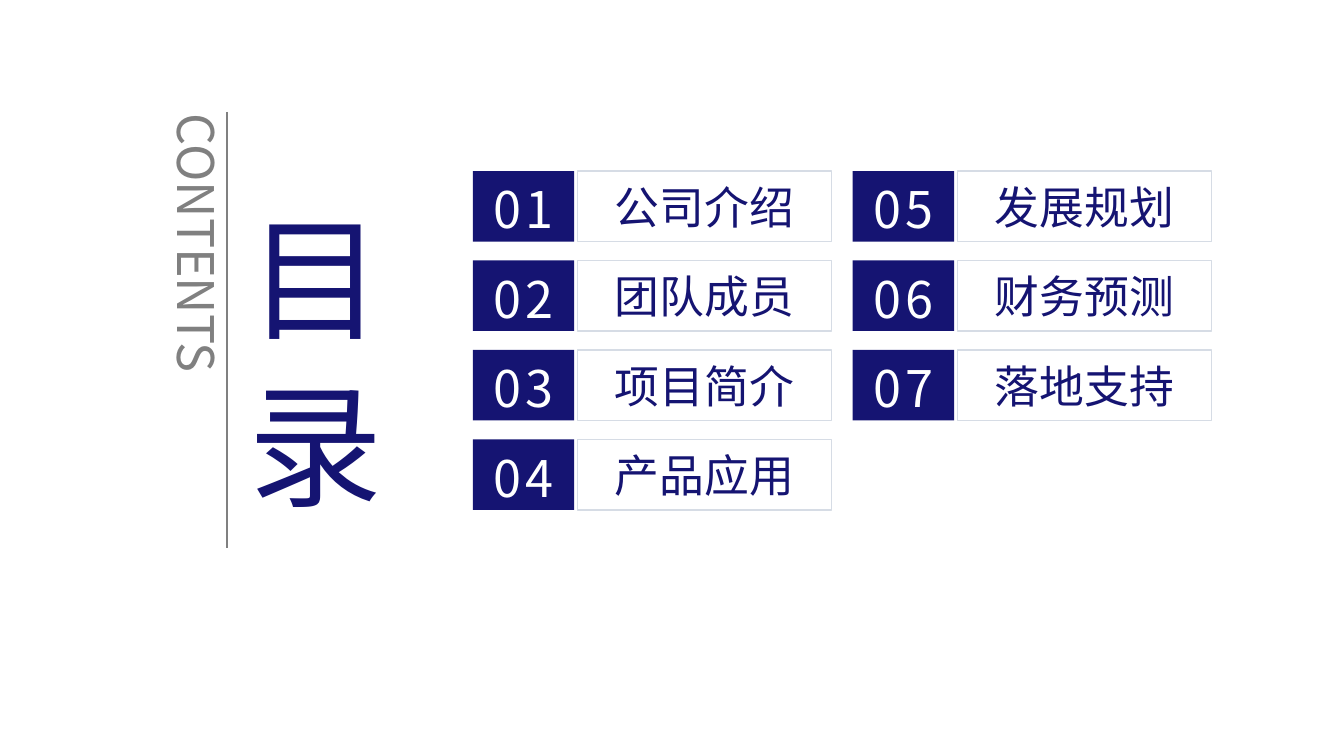
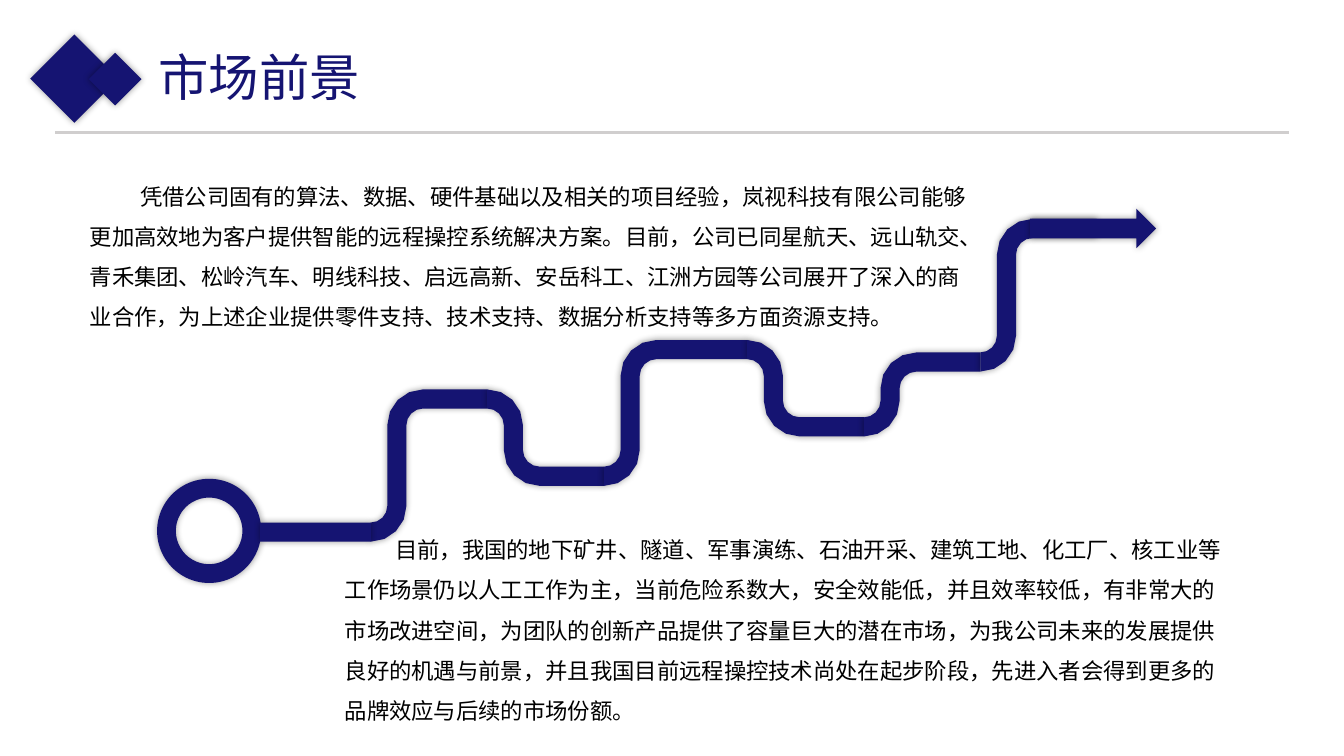
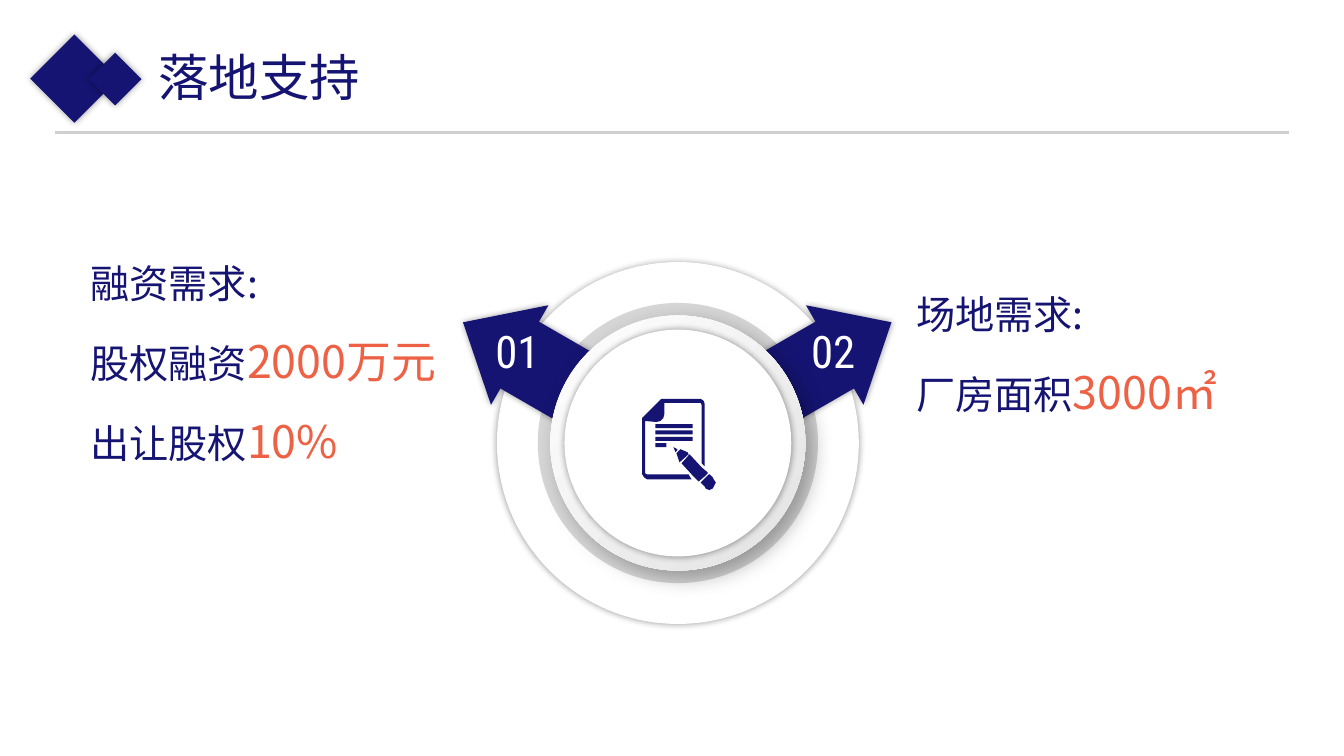
import dataclasses
import itertools
import math

import lxml.etree
import pptx
import pptx.dml.color
import pptx.enum.dml
import pptx.enum.shapes
import pptx.enum.text
import pptx.oxml.ns
import pptx.util

CELL = pptx.util.Inches(1) / 12  # the slide is a grid of 160 columns by 90 rows
SHAPE = pptx.enum.shapes.MSO_SHAPE
ALIGN = pptx.enum.text.PP_ALIGN
ANCHOR = pptx.enum.text.MSO_ANCHOR
FIT = pptx.enum.text.MSO_AUTO_SIZE
qn = pptx.oxml.ns.qn


@dataclasses.dataclass(frozen=True)
class TextStyle:
    font: str
    size: int
    colour: str
    spacing: int = 0


@dataclasses.dataclass(frozen=True)
class Shadow:
    opacity: int
    blur: int
    distance: int = 0
    angle: int = 0


class Theme:
    navy, white, black = "151472", "FFFFFF", "000000"
    grey, pale, rule, ring, silver = "808080", "D6DCE5", "D0CECE", "404040", "E2E2E2"
    orange = "ED6145"
    cjk = "Noto Sans CJK SC"

    contents_title = TextStyle(cjk, 96, navy)
    contents_side = TextStyle(cjk, 36, grey)
    agenda_number = TextStyle(cjk, 36, white, spacing=3)
    agenda_label = TextStyle("Calibri", 32, navy)
    title = TextStyle("Noto Sans CJK JP", 36, navy)
    body = TextStyle(cjk, 16, black)
    need = TextStyle(cjk, 28, navy)
    figure = TextStyle(cjk, 32, orange)
    badge = TextStyle("Roboto Condensed", 32, white)

    soft_shadow = Shadow(40, 5)
    deep_shadow = Shadow(30, 15, 7, 45)


@dataclasses.dataclass(frozen=True)
class Box:
    """A region in grid cells."""
    left: float
    top: float
    width: float
    height: float

    def inner(self, left, top, width, height):
        return Box(self.left + left, self.top + top, width, height)

    def centred(self, width, height, right=0, down=0):
        return self.inner((self.width - width) / 2 + right,
                          (self.height - height) / 2 + down, width, height)

    def point(self, x, y):
        return emu(self.left + x), emu(self.top + y)

    def emus(self):
        return [emu(value) for value in dataclasses.astuple(self)]


def emu(cells):
    return pptx.util.Emu(round(cells * CELL))


def rgb(colour):
    return pptx.dml.color.RGBColor.from_string(colour)


def set_values(target, values):
    for name, value in values.items():
        setattr(target, name, value)


def paint(shape, fill=None, outline=None, shadow=None):
    if fill:
        shape.fill.solid()
        shape.fill.fore_color.rgb = rgb(fill)
    else:
        shape.fill.background()
    if outline:
        shape.line.color.rgb = rgb(outline)
        shape.line.width = pptx.util.Pt(1)
    else:
        shape.line.fill.background()
    shape.shadow.inherit = False
    if shadow:
        add_shadow(shape, shadow)
    return shape


def add_shadow(shape, shadow):
    effects = shape.element.spPr.find(qn("a:effectLst"))
    outer = lxml.etree.SubElement(
        effects, qn("a:outerShdw"), blurRad=str(pptx.util.Pt(shadow.blur)),
        dist=str(pptx.util.Pt(shadow.distance)), dir=str(shadow.angle * 60000),
        algn="ctr", rotWithShape="0")
    colour = lxml.etree.SubElement(outer, qn("a:srgbClr"), val=Theme.black)
    lxml.etree.SubElement(colour, qn("a:alpha"), val=str(shadow.opacity * 1000))


def add_shape(page, kind, box, fill=None, outline=None, shadow=None, rotation=0, adjust=()):
    shape = page.shapes.add_shape(kind, *box.emus())
    shape.rotation = rotation
    for index, value in enumerate(adjust):
        shape.adjustments[index] = value
    return paint(shape, fill, outline, shadow)


def add_outline(page, box, contours, fill, shadow=None, scale=1):
    """Draw closed contours, given in cells of the box times the scale, as one shape."""
    rings = [[box.point(x * scale, y * scale) for x, y in contour] for contour in contours]
    builder = page.shapes.build_freeform(*rings[0][0], scale=1.0)
    for index, ring in enumerate(rings):
        if index:
            builder.move_to(*ring[0])
        builder.add_line_segments(ring[1:], close=True)
    return paint(builder.convert_to_shape(), fill, shadow=shadow)


def add_rule(page, start, end, colour, width):
    line = page.shapes.add_connector(pptx.enum.shapes.MSO_CONNECTOR.STRAIGHT, *start, *end)
    line.line.color.rgb = rgb(colour)
    line.line.width = pptx.util.Pt(width)
    lxml.etree.SubElement(line.element.spPr, qn("a:effectLst"))


def style_run(span, style):
    set_values(span.font, {"name": style.font, "size": pptx.util.Pt(style.size), "bold": False})
    span.font.color.rgb = rgb(style.colour)
    properties = span.font._element
    east_asian = style.font if "CJK" in style.font else Theme.cjk
    lxml.etree.SubElement(properties, qn("a:ea"), typeface=east_asian)
    if style.spacing:
        properties.set("spc", str(style.spacing * 100))


def write(shape, paragraphs, align=ALIGN.LEFT, spacing=None, indent=0, vertical=False, **frame):
    """Fill a shape with paragraphs, each a list of (text, style) runs."""
    text_frame = shape.text_frame
    set_values(text_frame, {"word_wrap": True, "auto_size": FIT.SHAPE_TO_FIT_TEXT,
                            "vertical_anchor": ANCHOR.TOP, **frame})
    if vertical:
        shape.element.find(".//" + qn("a:bodyPr")).set("vert", "eaVert")
    for index, runs in enumerate(paragraphs):
        para = text_frame.add_paragraph() if index else text_frame.paragraphs[0]
        set_values(para, {"alignment": align, "line_spacing": spacing})
        if indent:
            properties = para._p.get_or_add_pPr()
            properties.set("marL", "0")
            properties.set("indent", str(emu(indent)))
        for text, style in runs:
            span = para.add_run()
            span.text = text
            style_run(span, style)


def add_text(page, box, paragraphs, **settings):
    write(page.shapes.add_textbox(*box.emus()), paragraphs, **settings)


def add_page(deck, title, style, box, **settings):
    page = deck.slides.add_slide(deck.slide_layouts[5])
    holder = page.shapes.title
    set_values(holder, dict(zip(("left", "top", "width", "height"), box.emus())))
    write(holder, [[(title, style)]], **settings)
    return page


def add_titled_page(deck, title):
    header = Box(0, 0, 160, 18)
    page = add_page(deck, title, Theme.title, header.inner(17.67, 4.92, 74.52, 8.52))
    add_rule(page, header.point(6.6, 15.8), header.point(153.42, 15.8), Theme.rule, 2.25)
    for left, top, side in ((5.13, 5.64, 7.44), (11.5, 7.2, 4.44)):
        add_shape(page, SHAPE.RECTANGLE, header.inner(left, top, side, side), Theme.navy,
                  shadow=Theme.soft_shadow, rotation=315)
    return page


def add_contents_page(deck, box):
    vertical = {"vertical": True, "word_wrap": False}
    page = add_page(deck, "目 录", Theme.contents_title,
                    box.inner(7.92, 12.6, 21.84, 41.64), **vertical)
    add_text(page, box.inner(0.02, 0.36, 9.72, 32.64),
             [[("CONTENTS", Theme.contents_side)]], **vertical)
    add_rule(page, box.point(9, 1.32), box.point(9, 53.2), Theme.grey, 1.5)
    return page


def add_agenda(page, box, labels, rows=4):
    column_pitch, row_pitch, height = 45.24, 10.65, 8.4
    middle = {"align": ALIGN.CENTER, "vertical_anchor": ANCHOR.MIDDLE, "auto_size": FIT.NONE}
    for index, label in enumerate(labels):
        column, row = divmod(index, rows)
        entry = box.inner(column * column_pitch, row * row_pitch, 42.7, height)
        name = add_shape(page, SHAPE.RECTANGLE, entry.inner(12.45, 0, 30.24, height),
                         outline=Theme.pale)
        write(name, [[(label, Theme.agenda_label)]], **middle)
        number = add_shape(page, SHAPE.RECTANGLE, entry.inner(0, 0, 12.06, height), Theme.navy)
        write(number, [[(f"{index + 1:02}", Theme.agenda_number)]], margin_bottom=0, **middle)


def bend_contour(start, end, radius, thickness, steps=4):
    """Outline of a band that turns from level to upright and back to level."""
    (x0, y0), (x1, y1) = start, end
    turn = math.copysign(1, y1 - y0)
    angles = [math.radians(90 * step / steps) for step in range(steps + 1)]

    def edge(offset):
        first, second = radius + offset, radius - offset
        leave = [(x0 + first * math.sin(a), y0 + turn * (radius - first * math.cos(a)))
                 for a in angles]
        arrive = [(x0 + 2 * radius - second * math.cos(a),
                   y1 + turn * (second * math.sin(a) - radius)) for a in angles]
        return leave + arrive + [(x1, y1 - turn * offset)]

    return edge(thickness / 2) + edge(-thickness / 2)[::-1]


def add_journey(page, box):
    look = {"fill": Theme.navy, "shadow": Theme.soft_shadow}
    thickness = 2.28
    stops = [(25.43, 39.35), (39.3, 23.5), (53.2, 32.7), (70.25, 17.62),
             (84.15, 26.82), (98, 19.1), (111.85, 3.2)]
    for start, end in itertools.pairwise(stops):
        add_outline(page, box, [bend_contour(start, end, 3.12, thickness)], **look)
    add_shape(page, SHAPE.DONUT, box.inner(0, 33, 12.4, 12.4), adjust=[0.18], **look)
    add_shape(page, SHAPE.RECTANGLE,
              box.inner(12.26, 39.35 - thickness / 2, 13.2, thickness), **look)
    add_shape(page, SHAPE.RIGHT_ARROW, box.inner(103.94, 0.85, 15, 4.7), **look)


def add_body(page, box, text):
    margins = dict.fromkeys(("margin_left", "margin_top", "margin_right", "margin_bottom"), 0)
    add_text(page, box, [[(text, Theme.body)]], spacing=1.5, indent=6, **margins)


def add_document_icon(page, box):
    """Draw a sheet with a pencil, laid out on a field 72 units wide."""
    sheet = [(3, 22), (14, 23), (18, 22), (21, 19), (22, 15), (22, 4), (58, 4), (59, 6),
             (59, 64), (62, 67), (62, 5), (61, 2), (58, 0), (19, 0), (1, 18), (0, 19),
             (0, 75), (2, 78), (5, 80), (49, 80), (46, 75), (5, 75), (3, 74)]
    tip = [(33, 53), (35, 51), (35, 50), (31, 48)]
    neck = [(37, 63), (46, 55), (45, 53), (38, 50), (34, 54)]
    barrel = [(62, 77), (65, 74), (65, 73), (59, 68), (47, 55), (39, 64), (50, 76), (56, 82)]
    cap = [(58, 83), (62, 87), (63, 89), (66.5, 90.5), (70, 89), (71, 87), (73, 83),
           (71, 80), (70, 78), (67, 75), (66, 75), (63, 78)]
    bars = [[(13, top), (right, top), (right, top + 4), (13, top + 4)]
            for top, right in ((25, 50), (31.3, 50), (37.7, 50), (44, 24))]
    add_outline(page, box, [sheet, tip, neck, barrel, cap, *bars], Theme.navy,
                scale=box.width / 72)


def add_dial(page, box):
    soft = Theme.soft_shadow
    add_shape(page, SHAPE.OVAL, box, Theme.white, shadow=soft)
    ring = add_shape(page, SHAPE.DONUT, box.centred(33.36, 33.36), Theme.ring, adjust=[0.09])
    colour = ring.element.spPr.find(qn("a:solidFill")).find(qn("a:srgbClr"))
    lxml.etree.SubElement(colour, qn("a:alpha"), val="21000")
    for label, side in (("01", -1), ("02", 1)):
        add_shape(page, SHAPE.UP_ARROW, box.centred(13.68, 27.72, 13.5 * side - 0.08, -7.44),
                  Theme.navy, shadow=soft, rotation=60 * side % 360, adjust=[0.67, 0.57])
        add_text(page, box.centred(10.92, 7.4, 18.8 * side - 0.3, -11.05),
                 [[(label, Theme.badge)]], align=ALIGN.CENTER)
    rim = add_shape(page, SHAPE.OVAL, box.centred(30.36, 30.36), Theme.white,
                    shadow=Theme.deep_shadow)
    rim.fill.gradient()
    rim.fill.gradient_angle = 315
    for stop, position, shade in zip(rim.fill.gradient_stops, (0, 1),
                                     (Theme.white, Theme.silver)):
        stop.position = position
        stop.color.rgb = rgb(shade)
    add_shape(page, SHAPE.OVAL, box.centred(27, 27), Theme.white, shadow=soft)
    add_document_icon(page, box.centred(8.64, 10.92, 0.08, 0.2))


def add_needs(page, box, heading, needs):
    lines = [[(heading, Theme.need)]]
    lines += [[(name, Theme.need), (amount, Theme.figure)] for name, amount in needs]
    add_text(page, box, lines, align=ALIGN.JUSTIFY, spacing=1.5)


def main():
    deck = pptx.Presentation()
    deck.slide_width, deck.slide_height = emu(160), emu(90)

    contents = add_contents_page(deck, Box(18, 12, 30, 54))
    add_agenda(contents, Box(56.28, 20.36, 88, 40.35),
               ["公司介绍", "团队成员", "项目简介", "产品应用", "发展规划", "财务预测", "落地支持"])

    market = add_titled_page(deck, "市场前景")
    add_journey(market, Box(18.7, 24, 119, 46))
    add_body(market, Box(41.04, 62.24, 104.95, 24.24),
             "目前，我国的地下矿井、隧道、军事演练、石油开采、建筑工地、化工厂、核工业等"
             "工作场景仍以人工工作为主，当前危险系数大，安全效能低，并且效率较低，有非常大的"
             "市场改进空间，为团队的创新产品提供了容量巨大的潜在市场，为我公司未来的发展提供"
             "良好的机遇与前景，并且我国目前远程操控技术尚处在起步阶段，先进入者会得到更多的"
             "品牌效应与后续的市场份额。")
    add_body(market, Box(10.68, 20.16, 106.12, 19.44),
             "凭借公司固有的算法、数据、硬件基础以及相关的项目经验，岚视科技有限公司能够"
             "更加高效地为客户提供智能的远程操控系统解决方案。目前，公司已同星航天、远山轨交、"
             "青禾集团、松岭汽车、明线科技、启远高新、安岳科工、江洲方园等公司展开了深入的商"
             "业合作，为上述企业提供零件支持、技术支持、数据分析支持等多方面资源支持。")

    support = add_titled_page(deck, "落地支持")
    add_dial(support, Box(59.16, 31.2, 43.08, 43.08))
    add_needs(support, Box(9.6, 27.48, 43.72, 29.04), "融资需求:",
              [("股权融资", "2000万元"), ("出让股权", "10%")])
    add_needs(support, Box(107.88, 31.2, 46.32, 29.04), "场地需求:",
              [("厂房面积", "3000㎡")])

    deck.save("out.pptx")


if __name__ == "__main__":
    main()
